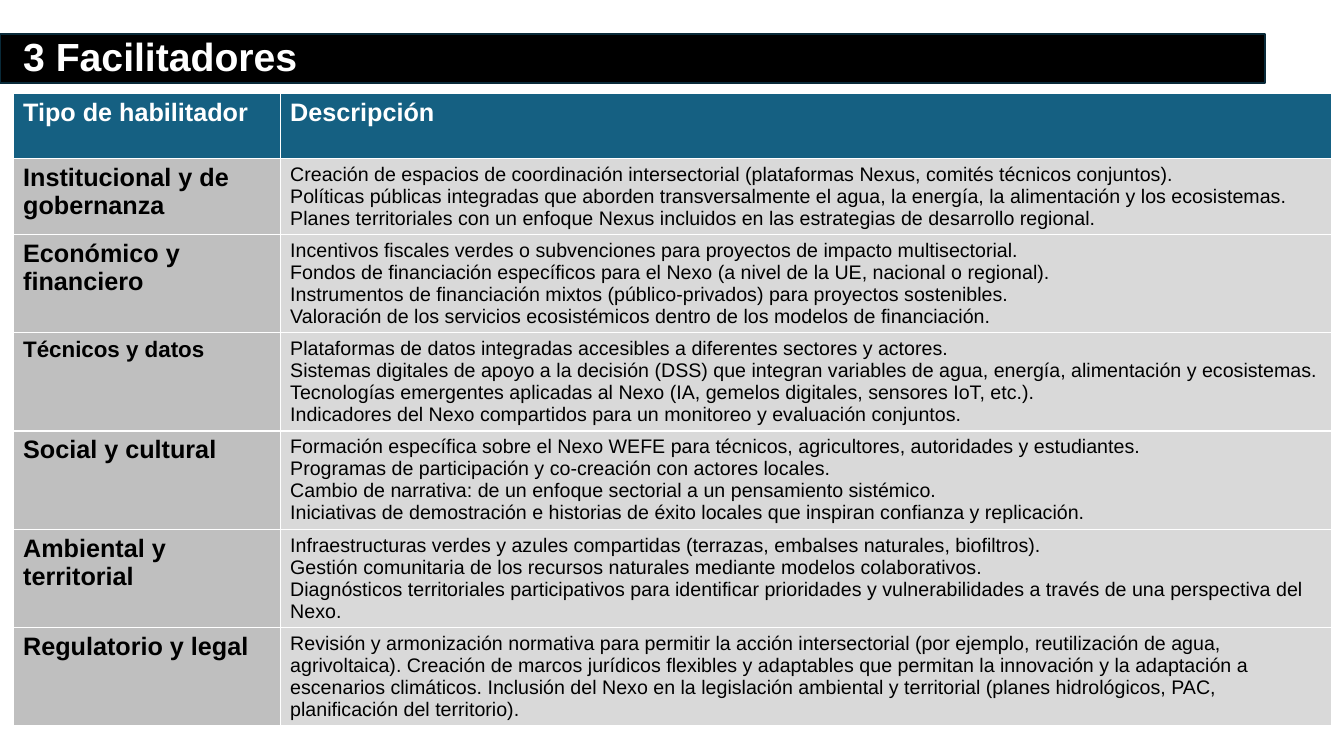
from pptx import Presentation
from pptx.dml.color import RGBColor
from pptx.enum import shapes, text
from pptx.util import Cm, Pt

BLACK = RGBColor(0x00, 0x00, 0x00)
WHITE = RGBColor(0xFF, 0xFF, 0xFF)
BAR_LINE = RGBColor(0x09, 0x2A, 0x39)
HEADER_FILL = RGBColor(0x15, 0x60, 0x82)
TYPE_FILL = RGBColor(0xBF, 0xBF, 0xBF)
DESCRIPTION_FILL = RGBColor(0xD9, 0xD9, 0xD9)

ENABLERS = [
    ("Institucional y de gobernanza", 18, [
        "Creación de espacios de coordinación intersectorial (plataformas Nexus, comités técnicos conjuntos).",
        "Políticas públicas integradas que aborden transversalmente el agua, la energía, la alimentación y los ecosistemas.",
        "Planes territoriales con un enfoque Nexus incluidos en las estrategias de desarrollo regional.",
    ]),
    ("Económico y financiero", 18, [
        "Incentivos fiscales verdes o subvenciones para proyectos de impacto multisectorial.",
        "Fondos de financiación específicos para el Nexo (a nivel de la UE, nacional o regional).",
        "Instrumentos de financiación mixtos (público-privados) para proyectos sostenibles.",
        "Valoración de los servicios ecosistémicos dentro de los modelos de financiación.",
    ]),
    ("Técnicos y datos", 16, [
        "Plataformas de datos integradas accesibles a diferentes sectores y actores.",
        "Sistemas digitales de apoyo a la decisión (DSS) que integran variables de agua, energía, alimentación y ecosistemas.",
        "Tecnologías emergentes aplicadas al Nexo (IA, gemelos digitales, sensores IoT, etc.).",
        "Indicadores del Nexo compartidos para un monitoreo y evaluación conjuntos.",
    ]),
    ("Social y cultural", 18, [
        "Formación específica sobre el Nexo WEFE para técnicos, agricultores, autoridades y estudiantes.",
        "Programas de participación y co-creación con actores locales.",
        "Cambio de narrativa: de un enfoque sectorial a un pensamiento sistémico.",
        "Iniciativas de demostración e historias de éxito locales que inspiran confianza y replicación.",
    ]),
    ("Ambiental y territorial", 18, [
        "Infraestructuras verdes y azules compartidas (terrazas, embalses naturales, biofiltros).",
        "Gestión comunitaria de los recursos naturales mediante modelos colaborativos.",
        "Diagnósticos territoriales participativos para identificar prioridades y vulnerabilidades "
        "a través de una perspectiva del Nexo.",
    ]),
    ("Regulatorio y legal", 18, [
        "Revisión y armonización normativa para permitir la acción intersectorial (por ejemplo, "
        "reutilización de agua, agrivoltaica). Creación de marcos jurídicos flexibles y adaptables "
        "que permitan la innovación y la adaptación a escenarios climáticos. Inclusión del Nexo en la "
        "legislación ambiental y territorial (planes hidrológicos, PAC, planificación del territorio).",
    ]),
]


def style_paragraph(paragraph, size, color, bold):
    paragraph.font.name = "Arial"
    paragraph.font.size = Pt(size)
    paragraph.font.bold = bold
    paragraph.font.color.rgb = color


def fill_cell(cell, lines, fill, size, color, bold):
    cell.fill.solid()
    cell.fill.fore_color.rgb = fill
    cell.text_frame.text = "\n".join(lines)
    for paragraph in cell.text_frame.paragraphs:
        style_paragraph(paragraph, size, color, bold)


presentation = Presentation()
presentation.slide_width = Cm(33.87)
presentation.slide_height = Cm(19.05)
slide = presentation.slides.add_slide(presentation.slide_layouts[5])

bar = slide.shapes.add_shape(shapes.MSO_SHAPE.RECTANGLE, Cm(0), Cm(0.86), Cm(31.88), Cm(1.24))
bar.shadow.inherit = False
bar.fill.solid()
bar.fill.fore_color.rgb = BLACK
bar.line.color.rgb = BAR_LINE
bar.line.width = Pt(1.5)

title = slide.shapes.title
title.element.addprevious(bar.element)
title.left, title.top, title.width, title.height = Cm(0.33), Cm(0.61), Cm(25.48), Cm(1.75)
title.text_frame.text = "3 Facilitadores"
title.text_frame.auto_size = text.MSO_AUTO_SIZE.NONE
title.text_frame.vertical_anchor = text.MSO_ANCHOR.MIDDLE
title_paragraph = title.text_frame.paragraphs[0]
title_paragraph.alignment = text.PP_ALIGN.LEFT
title_paragraph.line_spacing = 0.9
style_paragraph(title_paragraph, 28, WHITE, True)

row_count = len(ENABLERS) + 1
table = slide.shapes.add_table(
    row_count, 2, Cm(0.33), Cm(2.36), Cm(33.22), Cm(1.63) * row_count
).table
table.first_col = True
table.horz_banding = False
table.columns[0].width = Cm(6.73)
table.columns[1].width = Cm(26.49)

for column, heading in enumerate(("Tipo de habilitador", "Descripción")):
    fill_cell(table.cell(0, column), [heading], HEADER_FILL, 18, WHITE, True)

for row, (enabler, size, descriptions) in enumerate(ENABLERS, start=1):
    fill_cell(table.cell(row, 0), [enabler], TYPE_FILL, size, BLACK, True)
    fill_cell(table.cell(row, 1), descriptions, DESCRIPTION_FILL, 14, BLACK, False)

presentation.save("out.pptx")
